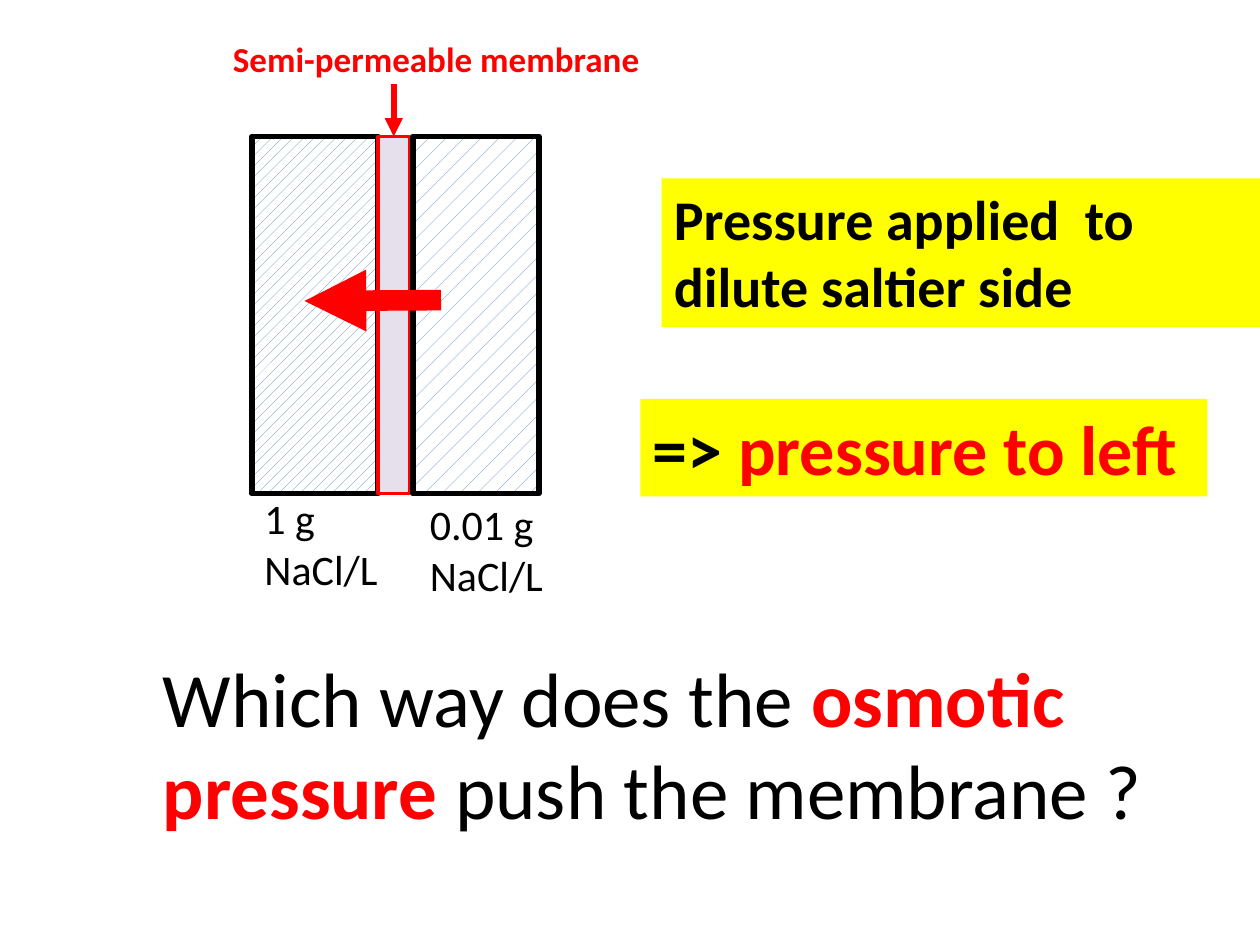
import dataclasses
import lxml.etree
import pptx
import pptx.dml.color
import pptx.enum.dml
import pptx.enum.shapes
import pptx.enum.text
import pptx.oxml.ns
import pptx.util

Pt = pptx.util.Pt
DOTS = pptx.enum.dml.MSO_PATTERN


def tint(code):
    return pptx.dml.color.RGBColor.from_string(code)


@dataclasses.dataclass(frozen=True)
class Theme:
    font: str = "Calibri"
    black: str = "000000"
    white: str = "FFFFFF"
    red: str = "FF0000"
    blue: str = "4F81BD"
    lilac: str = "E6E0EC"
    yellow: str = "FFFF00"
    label: int = 20
    amount: int = 24
    remark: int = 32
    answer: int = 40
    question: int = 44


class Painter:
    def __init__(self, slide, theme):
        self.slide = slide
        self.theme = theme

    def block(self, box, fill=None, dots=None, edge=None, width=0):
        shape = self.slide.shapes.add_shape(
            pptx.enum.shapes.MSO_SHAPE.RECTANGLE, *map(Pt, box))
        shape.shadow.inherit = False
        if dots is None:
            shape.fill.solid()
            shape.fill.fore_color.rgb = tint(fill)
        else:
            shape.fill.patterned()
            shape.fill.pattern = dots
            shape.fill.fore_color.rgb = tint(self.theme.blue)
            shape.fill.back_color.rgb = tint(self.theme.white)
        if edge is None:
            shape.line.fill.background()
        else:
            shape.line.color.rgb = tint(edge)
            shape.line.width = Pt(width)
        return shape

    def letter(self, shape, size, parts, bold=None):
        frame = shape.text_frame
        frame.word_wrap = True
        frame.auto_size = pptx.enum.text.MSO_AUTO_SIZE.SHAPE_TO_FIT_TEXT
        frame.vertical_anchor = pptx.enum.text.MSO_ANCHOR.TOP
        para = frame.paragraphs[0]
        para.alignment = pptx.enum.text.PP_ALIGN.LEFT
        para.font.name = self.theme.font
        para.font.size = Pt(size)
        para.font.bold = bold
        for text, color, strong in parts:
            run = para.add_run()
            run.text = text
            run.font.color.rgb = tint(color)
            if strong:
                run.font.bold = True

    def text(self, box, size, parts, bold=None):
        shape = self.slide.shapes.add_textbox(*map(Pt, box))
        self.letter(shape, size, parts, bold)

    def banner(self, box, size, parts):
        shape = self.block(box, self.theme.yellow)
        self.letter(shape, size, parts, bold=True)

    def arrow(self, start, end, width):
        line = self.slide.shapes.add_connector(
            pptx.enum.shapes.MSO_CONNECTOR.STRAIGHT, *map(Pt, start + end))
        line.line.color.rgb = tint(self.theme.red)
        line.line.width = Pt(width)
        qn = pptx.oxml.ns.qn
        props = line.element.spPr
        lxml.etree.SubElement(props.find(qn("a:ln")), qn("a:tailEnd"), type="triangle")
        lxml.etree.SubElement(props, qn("a:effectLst"))


def main():
    deck = pptx.Presentation()
    deck.slide_width, deck.slide_height = Pt(720), Pt(540)
    theme = Theme()
    paint = Painter(deck.slides.add_slide(deck.slide_layouts[6]), theme)

    top, tall, wide = 78, 204, 72
    left, skin, right = 144, 216, 236
    paint.block((left, top, wide, tall), dots=DOTS.PERCENT_20, edge=theme.black, width=3.25)
    paint.block((skin, top, 18, tall), theme.lilac, edge=theme.red, width=2)
    paint.block((right, top, wide, tall), dots=DOTS.PERCENT_5, edge=theme.black, width=3.25)

    for x, y, text in ((left, 278, "1 g NaCl/L"), (238.5, 281.5, "0.01 g NaCl/L")):
        paint.text((x, y, 90, 65.4), theme.amount, [(text, theme.black, False)])

    paint.text((86, 368, 604, 113.5), theme.question, [
        ("Which way does the ", theme.black, False),
        ("osmotic pressure ", theme.red, True),
        ("push the membrane ?", theme.black, False)])
    paint.text((126, 18, 264, 31.5), theme.label,
               [("Semi-permeable membrane", theme.red, False)], bold=True)

    paint.arrow((225, 48), (225, top), 3.5)
    paint.arrow((252, 171.5), (174, 172), 11.75)

    paint.banner((378, 102, 342, 84.8), theme.remark,
                 [("Pressure applied  to dilute saltier side", theme.black, False)])
    paint.banner((366, 228, 324, 55.7), theme.answer, [
        ("=> ", theme.black, False),
        ("pressure to left", theme.red, False)])

    deck.save("out.pptx")


if __name__ == "__main__":
    main()
